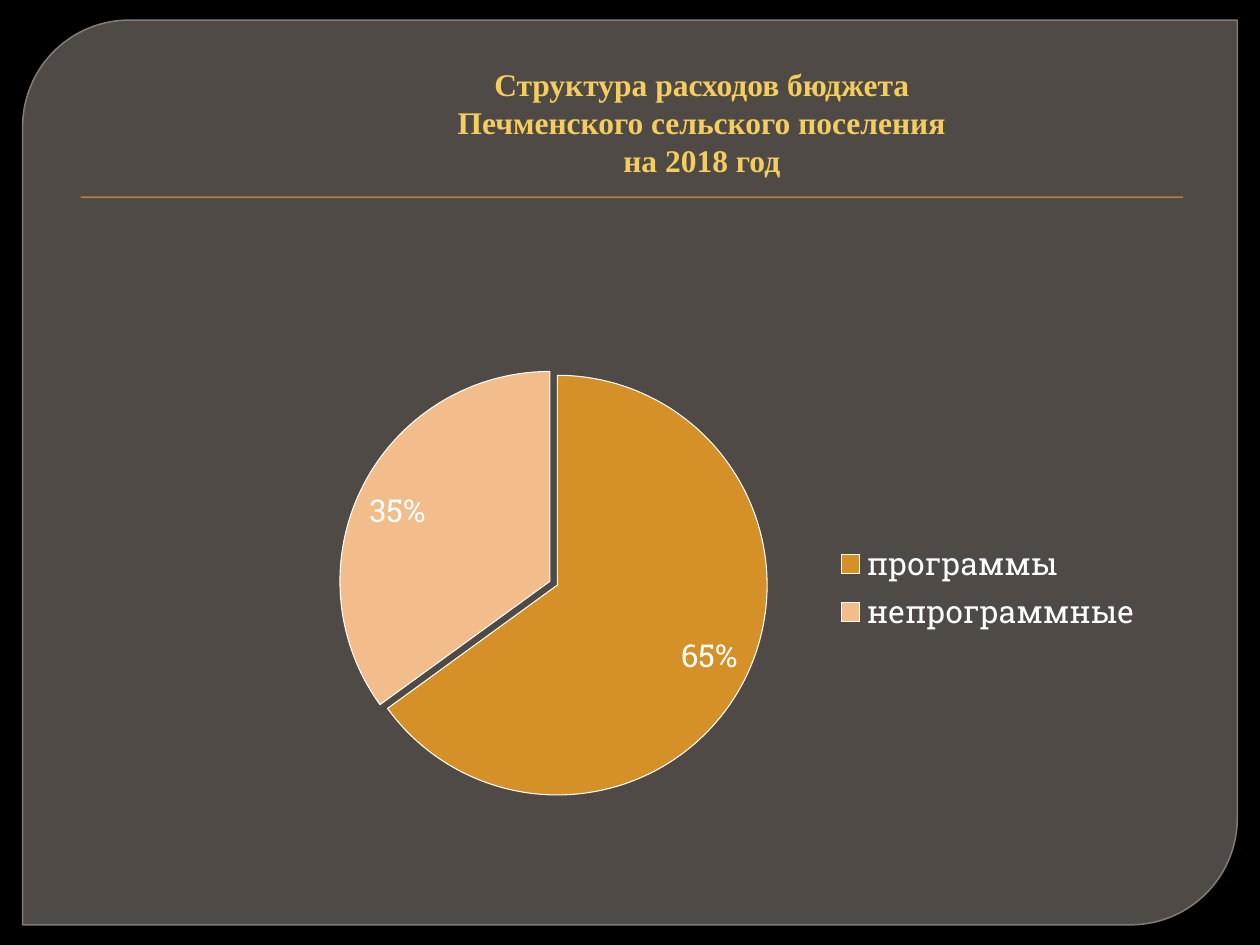
from lxml import etree
from pptx import Presentation
from pptx.chart.data import CategoryChartData
from pptx.dml.color import RGBColor
from pptx.enum.chart import XL_CHART_TYPE, XL_LABEL_POSITION, XL_LEGEND_POSITION
from pptx.enum.shapes import MSO_SHAPE
from pptx.enum.text import MSO_ANCHOR, MSO_AUTO_SIZE, PP_ALIGN
from pptx.util import Inches, Pt

PIE = XL_CHART_TYPE.PIE
INSIDE_END = XL_LABEL_POSITION.INSIDE_END
LEGEND_RIGHT = XL_LEGEND_POSITION.RIGHT
PANEL_SHAPE = MSO_SHAPE.ROUND_2_DIAG_RECTANGLE
RULE_SHAPE = MSO_SHAPE.RECTANGLE
BOTTOM = MSO_ANCHOR.BOTTOM
NO_AUTOFIT = MSO_AUTO_SIZE.NONE
CENTER = PP_ALIGN.CENTER

BLACK = RGBColor(0x00, 0x00, 0x00)
WHITE = RGBColor(0xFF, 0xFF, 0xFF)
PANEL_FILL = RGBColor(0x4F, 0x4A, 0x45)
PANEL_EDGE = RGBColor(0x83, 0x7A, 0x76)
RULE_ORANGE = RGBColor(0xF0, 0xA2, 0x2E)
TITLE_YELLOW = RGBColor(0xF3, 0xCD, 0x60)
PROGRAM_ORANGE = RGBColor(0xD5, 0x90, 0x28)
OTHER_PEACH = RGBColor(0xF2, 0xBC, 0x8B)

TITLE_FONT = "Times New Roman"
CHART_FONT = "Roboto Slab"
TITLE_LINES = ["Структура расходов бюджета",
               "Печменского сельского поселения",
               "на 2018 год"]
EXPENSES = [("программы", 0.65, PROGRAM_ORANGE),
            ("непрограммные", 0.35, OTHER_PEACH)]
PLOT_LAYOUT = {"x": 0.115, "y": 0.086, "w": 0.465, "h": 0.811}


def format_font(font, name, size, color, bold=False):
    font.name = name
    font.size = Pt(size)
    font.bold = bold
    font.color.rgb = color


def write_lines(frame, lines, align, spacing, **font_format):
    paragraph = frame.paragraphs[0]
    paragraph.alignment = align
    paragraph.line_spacing = spacing
    for number, line in enumerate(lines):
        if number:
            paragraph.add_line_break()
        run = paragraph.add_run()
        run.text = line
        format_font(run.font, **font_format)


def add_block(slide, kind, box, fill, edge=None):
    block = slide.shapes.add_shape(kind, *map(Inches, box))
    block.shadow.inherit = False
    block.fill.solid()
    block.fill.fore_color.rgb = fill
    if edge is None:
        block.line.fill.background()
    else:
        block.line.color.rgb = edge
        block.line.width = Pt(0.87)
    return block


def add_backdrop(slide, box):
    slide.background.fill.solid()
    slide.background.fill.fore_color.rgb = BLACK
    left, top, width, _ = box
    panel = add_block(slide, PANEL_SHAPE, box, PANEL_FILL, PANEL_EDGE)
    panel.adjustments[0] = 0.118
    panel.adjustments[1] = 0
    # Rule under the title
    add_block(slide, RULE_SHAPE, (left + 0.46, top + 1.4, width - 0.89, 0.01),
              RULE_ORANGE)


def place_title(slide, box):
    title = slide.shapes.title
    title.left, title.top, title.width, title.height = map(Inches, box)
    frame = title.text_frame
    frame.word_wrap = True
    frame.auto_size = NO_AUTOFIT
    frame.vertical_anchor = BOTTOM
    frame.margin_left = Inches(0.2)
    frame.margin_top = Inches(0.05)
    frame.margin_bottom = Inches(0.04)
    write_lines(frame, TITLE_LINES, CENTER, 1.0, name=TITLE_FONT, size=18,
                color=TITLE_YELLOW, bold=True)
    # Bring the title in front of the backdrop
    title.element.getparent().append(title.element)


def set_plot_layout(chart):
    plot_area = chart.plots[0]._element.getparent()
    namespace = plot_area.nsmap["c"]
    for old in plot_area.findall(f"{{{namespace}}}layout"):
        plot_area.remove(old)
    layout = etree.Element(f"{{{namespace}}}layout")
    manual = etree.SubElement(layout, f"{{{namespace}}}manualLayout")
    settings = {"layoutTarget": "inner", "xMode": "edge", "yMode": "edge",
                **PLOT_LAYOUT}
    for tag, value in settings.items():
        etree.SubElement(manual, f"{{{namespace}}}{tag}", val=str(value))
    plot_area.insert(0, layout)


def explode_slices(series, percent):
    element = series._element
    namespace = element.nsmap["c"]
    explosion = etree.Element(f"{{{namespace}}}explosion", val=str(percent))
    element.find(f"{{{namespace}}}dPt").addprevious(explosion)


def add_expense_pie(slide, box):
    data = CategoryChartData(number_format="0%")
    data.categories = [name for name, _, _ in EXPENSES]
    data.add_series("Series 1", [share for _, share, _ in EXPENSES])
    chart = slide.shapes.add_chart(PIE, *map(Inches, box), data).chart
    chart.has_title = False
    format_font(chart.font, CHART_FONT, 18, WHITE)
    set_plot_layout(chart)

    # Legend
    chart.has_legend = True
    chart.legend.position = LEGEND_RIGHT
    chart.legend.include_in_layout = False

    # Slices
    pie = chart.plots[0]
    pie.vary_by_categories = True
    series = pie.series[0]
    for number, (_, _, color) in enumerate(EXPENSES):
        slice_format = series.points[number].format
        slice_format.fill.solid()
        slice_format.fill.fore_color.rgb = color
        slice_format.line.color.rgb = WHITE
        slice_format.line.width = Pt(0.6)
    explode_slices(series, 2)

    # Share labels
    pie.has_data_labels = True
    labels = pie.data_labels
    labels.show_value = True
    labels.show_percentage = False
    labels.number_format = "0%"
    labels.number_format_is_linked = False
    labels.position = INSIDE_END
    format_font(labels.font, CHART_FONT, 18, WHITE)


def main():
    deck = Presentation()
    deck.slide_width, deck.slide_height = Inches(10), Inches(7.5)
    title_only = deck.slide_layouts[5]
    slide = deck.slides.add_slide(title_only)
    add_backdrop(slide, (0.18, 0.16, 9.64, 7.18))
    place_title(slide, (1.54, 0.44, 7.96, 1.02))
    add_expense_pie(slide, (1.85, 2.57, 7.32, 4.19))
    deck.save("out.pptx")


if __name__ == "__main__":
    main()
